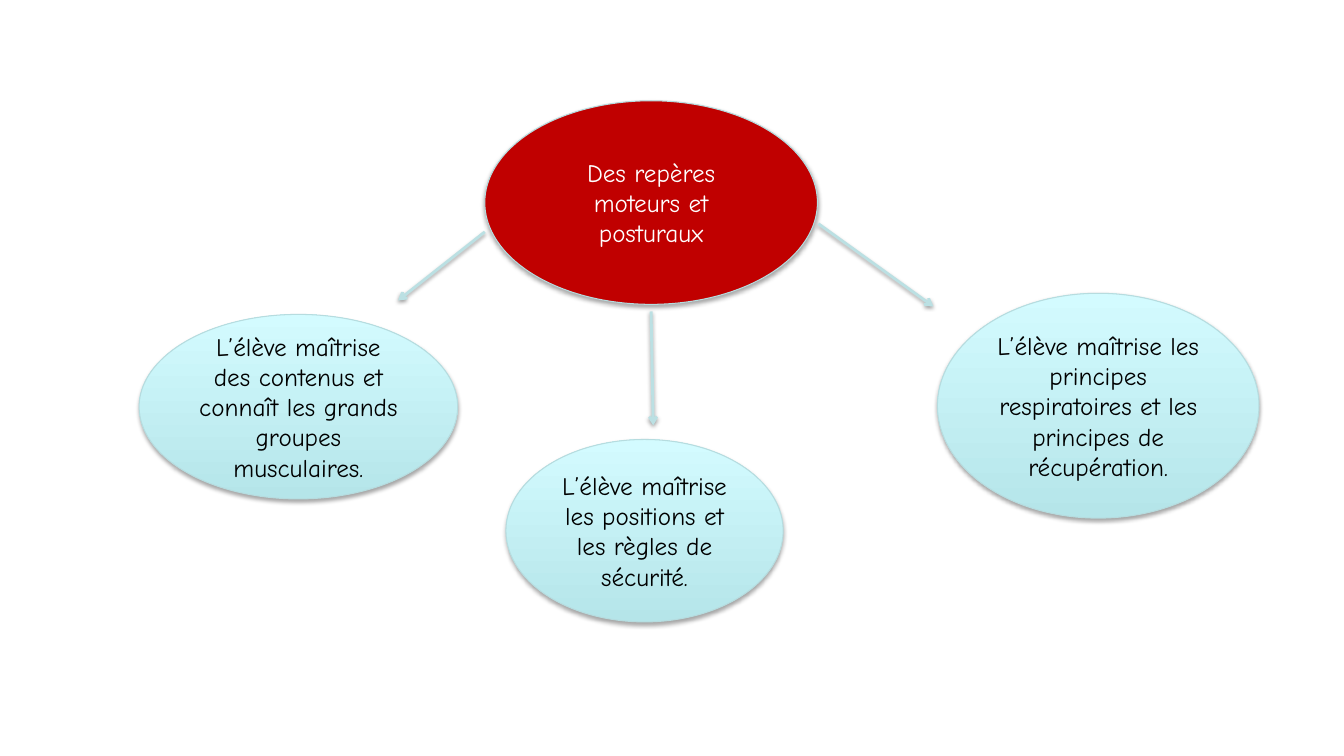
from lxml import etree
from pptx import Presentation
from pptx.dml.color import RGBColor
from pptx.enum.shapes import MSO_CONNECTOR, MSO_SHAPE
from pptx.enum.text import MSO_ANCHOR, PP_ALIGN
from pptx.oxml.ns import qn
from pptx.util import Pt

RED = RGBColor(0xC0, 0x00, 0x00)
WHITE = RGBColor(0xFF, 0xFF, 0xFF)
BLACK = RGBColor(0x00, 0x00, 0x00)
AQUA_DARK = RGBColor(0xB5, 0xE5, 0xE9)
AQUA_LIGHT = RGBColor(0xD3, 0xFB, 0xFF)
OUTLINE = RGBColor(0xB6, 0xDC, 0xDF)
ARROW = RGBColor(0xBB, 0xE0, 0xE3)

deck = Presentation()
deck.slide_width, deck.slide_height = Pt(960), Pt(540)
page = deck.slides.add_slide(deck.slide_layouts[6])


def add_shadow(shape, distance, opacity):
    """Cast a soft black shadow straight down; lengths in points, opacity in percent."""
    effects = etree.SubElement(shape._element.spPr, qn("a:effectLst"))
    shadow = etree.SubElement(
        effects, qn("a:outerShdw"), blurRad=str(Pt(3.1)), dist=str(Pt(distance)),
        dir="5400000", rotWithShape="0")
    color = etree.SubElement(shadow, qn("a:srgbClr"), val=str(BLACK))
    etree.SubElement(color, qn("a:alpha"), val=str(opacity * 1000))


def add_bubble(text, left, top, width, height, text_color=BLACK, solid=None):
    """Add a captioned ellipse, aqua gradient unless a solid colour is given."""
    bubble = page.shapes.add_shape(
        MSO_SHAPE.OVAL, Pt(left), Pt(top), Pt(width), Pt(height))
    if solid is not None:
        bubble.fill.solid()
        bubble.fill.fore_color.rgb = solid
    else:
        bubble.fill.gradient()
        bubble.fill.gradient_angle = 90
        for stop, color in zip(bubble.fill.gradient_stops, (AQUA_DARK, AQUA_LIGHT)):
            stop.color.rgb = color
    bubble.line.color.rgb = OUTLINE
    bubble.line.width = Pt(0.75)
    add_shadow(bubble, distance=1.8, opacity=35)

    frame = bubble.text_frame
    frame.word_wrap = True
    frame.vertical_anchor = MSO_ANCHOR.MIDDLE
    para = frame.paragraphs[0]
    para.alignment = PP_ALIGN.CENTER
    span = para.add_run()
    span.text = text
    span.font.name = "Comic Neue"
    span.font.size = Pt(18)
    span.font.color.rgb = text_color


add_bubble("Des repères moteurs et posturaux", 346.3, 72, 237.6, 145.4,
           text_color=WHITE, solid=RED)

# Each skill: caption, bubble box, arrow start and end
skills = [
    ("L’élève maîtrise des contenus et connaît les grands groupes musculaires.",
     (99.4, 224.6, 227.5, 131.8), (346.3, 165.6, 284.4, 214.6)),
    ("L’élève maîtrise les positions et les règles de sécurité.",
     (361.4, 313.9, 198, 130.3), (465.1, 222.5, 466.6, 303.8)),
    ("L’élève maîtrise les principes respiratoires et les principes de récupération.",
     (669.6, 209.5, 229.7, 160.6), (584.6, 159.8, 666.7, 218.9)),
]
for caption, box, ends in skills:
    arrow = page.shapes.add_connector(MSO_CONNECTOR.STRAIGHT, *map(Pt, ends))
    arrow.line.color.rgb = ARROW
    arrow.line.width = Pt(2)
    etree.SubElement(arrow.line._get_or_add_ln(), qn("a:tailEnd"), type="arrow")
    add_shadow(arrow, distance=1.6, opacity=38)
    add_bubble(caption, *box)

deck.save("out.pptx")
